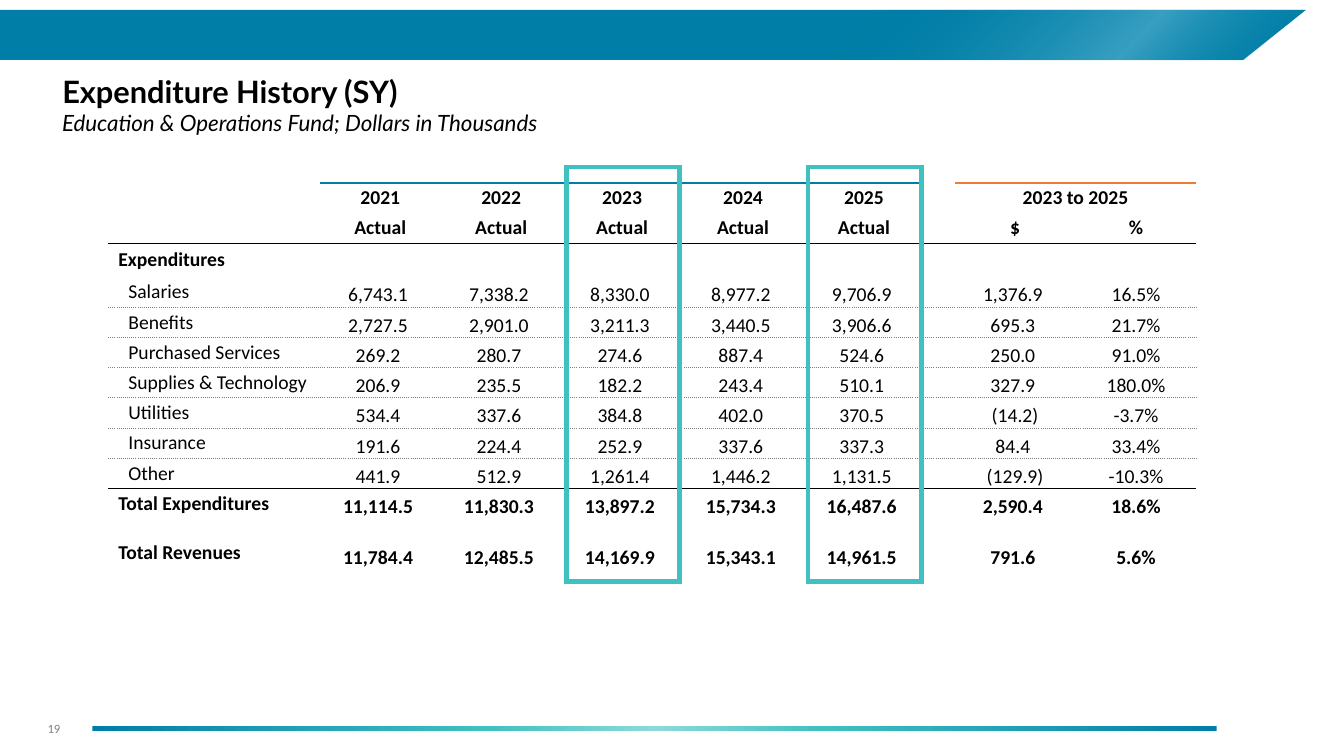
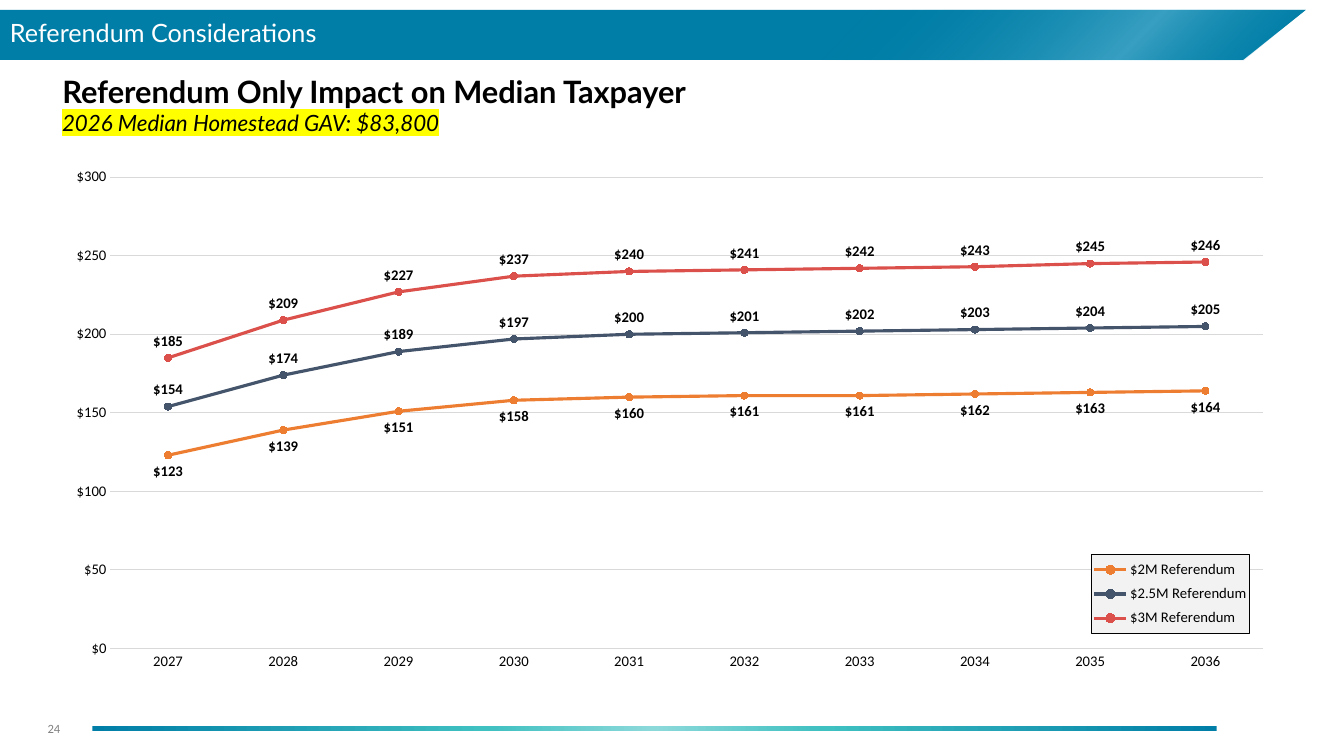
from lxml import etree
from pptx import Presentation
from pptx import util as u
from pptx.chart.data import CategoryChartData
from pptx.dml.color import RGBColor
from pptx.enum import chart as ch, shapes, text
from pptx.oxml import parse_xml
from pptx.oxml.ns import nsdecls, qn

BLUE, TEAL, PALE, ICE = "007EA7", "3FC0C1", "8CD9DA", "BAEEFF"
ORANGE, NAVY, RED = "ED7D31", "44546A", "DB504A"
BLACK, WHITE, GRAY, RULE, MIST = "000000", "FFFFFF", "808080", "D9D9D9", "F2F2F2"
HEAD, BODY = "Lato", "Calibri"
WIDE, HIGH = u.Inches(13.333), u.Inches(7.5)
MID, LOW, TOP = (text.MSO_ANCHOR.MIDDLE, text.MSO_ANCHOR.BOTTOM,
                 text.MSO_ANCHOR.TOP)


# Units: every place and size is a percentage of the slide
def across(share):
    return u.Emu(round(WIDE * share / 100))


def down(share):
    return u.Emu(round(HIGH * share / 100))


def place(x, y, w, h):
    return across(x), down(y), across(w), down(h)


def color(code):
    return RGBColor.from_string(code)


def style(font, size, face=BODY, tint=BLACK, bold=False, italic=False):
    font.size, font.name = u.Pt(size), face
    font.bold, font.italic = bold, italic
    font.color.rgb = color(tint)


def write(frame, words, size, anchor=TOP, align=None, lead=None, mark=None, **look):
    """Fill a text frame with one formatted line."""
    frame.word_wrap, frame.vertical_anchor = True, anchor
    para = frame.paragraphs[0]
    para.alignment, para.line_spacing = align, lead
    if not words:
        etree.SubElement(para._p, qn("a:endParaRPr"), sz=str(size * 100))
        return
    run = para.add_run()
    run.text = words
    style(run.font, size, **look)
    if mark:
        glow = parse_xml(f'<a:highlight {nsdecls("a")}><a:srgbClr val="{mark}"/></a:highlight>')
        run._r.rPr.find(qn("a:solidFill")).addnext(glow)


def blend(shape, stops, angle=0):
    """Give a shape a gradient of (place, colour, opacity) stops."""
    shape.fill.background()
    marks = "".join(
        f'<a:gs pos="{pos * 1000}"><a:srgbClr val="{code}">'
        f'<a:alpha val="{full * 1000}"/></a:srgbClr></a:gs>'
        for pos, code, full in stops)
    props = shape._element.spPr
    props.replace(props.find(qn("a:noFill")), parse_xml(
        f'<a:gradFill {nsdecls("a")} rotWithShape="1"><a:gsLst>{marks}</a:gsLst>'
        f'<a:lin ang="{angle * 60000}" scaled="0"/></a:gradFill>'))


def edge(cell, side, rule=None):
    """Draw one cell border from (colour, width, dash), or clear it."""
    body, size = "<a:noFill/>", ""
    if rule:
        code, width, dash = rule
        body = (f'<a:solidFill><a:srgbClr val="{code}"/></a:solidFill>'
                f'<a:prstDash val="{dash}"/>')
        size = f'w="{u.Pt(width)}"'
    cell._tc.get_or_add_tcPr().append(parse_xml(
        f'<a:ln{side} {nsdecls("a")} {size}>{body}</a:ln{side}>'))


def layout(x, y, w, h, inner=False):
    """Manual chart layout, in percentages of the chart."""
    parts = '<c:layoutTarget val="inner"/>' if inner else ""
    parts += '<c:xMode val="edge"/><c:yMode val="edge"/>'
    parts += "".join(f'<c:{key} val="{val / 100}"/>' for key, val in zip("xywh", (x, y, w, h)))
    return parse_xml(f'<c:layout {nsdecls("c")}><c:manualLayout>{parts}'
                     '</c:manualLayout></c:layout>')


class Deck:
    def __init__(self):
        self.prs = Presentation()
        self.prs.slide_width, self.prs.slide_height = WIDE, HIGH
        self.slide = None

    def page(self, title, sub, number, header=None, mark=None):
        """Start a slide with its band, footer and headings."""
        self.slide = self.prs.slides.add_slide(self.prs.slide_layouts[6])
        self.band().fill.fore_color.rgb = color(BLUE)
        blend(self.band(), [(64, BLUE, 0), (86, ICE, 30), (100, BLUE, 0)], 45)
        blend(self.rect(6.88, 96, 83.65, 0.7),
              [(0, BLUE, 100), (35, TEAL, 100), (50, PALE, 100), (65, TEAL, 100),
               (100, BLUE, 100)])
        self.label(title, 3.9, 9.47, 91.88, 6.67, size=22, face=HEAD, bold=True, lead=0.9)
        if header:
            self.label(header, 0, 1.2, 100, 6.67, size=18, face=HEAD, tint=WHITE,
                       anchor=MID, lead=0.9)
        self.label(str(number), 2.8, 93.68, 16.9, 5.33, size=9, tint=GRAY, anchor=MID)
        self.label(sub, 3.88, 14.13, 91.88, 5.33, size=16, face=HEAD, italic=True,
                   lead=0.9, mark=mark)

    def band(self):
        pen = self.slide.shapes.build_freeform(0, down(1.3))
        pen.add_line_segments([(across(97.17), down(1.3)), (across(92.5), down(7.93)),
                               (0, down(7.93))])
        band = pen.convert_to_shape()
        band.shadow.inherit = False
        band.fill.solid()
        band.line.fill.background()
        return band

    def rect(self, *spot):
        rect = self.slide.shapes.add_shape(shapes.MSO_SHAPE.RECTANGLE, *place(*spot))
        rect.shadow.inherit = False
        rect.fill.background()
        rect.line.fill.background()
        return rect

    def frame(self, *spot):
        rect = self.rect(*spot)
        rect.line.color.rgb, rect.line.width = color(TEAL), u.Pt(3)
        # Square corners
        etree.SubElement(rect._element.spPr.find(qn("a:ln")), qn("a:miter"), lim="800000")

    def label(self, words, *spot, **look):
        write(self.slide.shapes.add_textbox(*place(*spot)).text_frame, words, **look)

    def table(self, x, y, cols, rows):
        part = self.slide.shapes.add_table(
            len(rows), len(cols), *place(x, y, sum(cols), sum(rows)))
        table = part.table
        table.first_row = table.horz_banding = False
        # Plain style without a grid
        table._tbl.tblPr.find(qn("a:tableStyleId")).text = "{2D5ABB26-0587-4C30-8999-92F81FD0307C}"
        for col, width in zip(table.columns, cols):
            col.width = across(width)
        for row, height in zip(table.rows, rows):
            row.height = down(height)
        return table

    def chart(self, spot, cats, lines, top, step, money):
        data = CategoryChartData(number_format=money)
        data.categories = cats
        for name, vals, *_ in lines:
            data.add_series(name, vals)
        chart = self.slide.shapes.add_chart(
            ch.XL_CHART_TYPE.LINE_MARKERS, *place(*spot), data).chart
        chart.has_title = False
        style(chart.font, 10.5)
        self.axes(chart, top, step, money)
        chart.plots[0].vary_by_categories = False
        for series, (_, _, code, side) in zip(chart.plots[0].series, lines):
            self.series(series, code, side, money)
        return chart

    def axes(self, chart, top, step, money):
        cat, val = chart.category_axis, chart.value_axis
        for axis in (cat, val):
            axis.major_tick_mark = axis.minor_tick_mark = ch.XL_TICK_MARK.NONE
            style(axis.tick_labels.font, 10.5)
        val.minimum_scale, val.maximum_scale, val.major_unit = 0, top, step
        val.tick_labels.number_format = money
        val.tick_labels.number_format_is_linked = False
        val.format.line.fill.background()
        for line in (cat.format.line, val.major_gridlines.format.line):
            line.color.rgb, line.width = color(RULE), u.Pt(0.75)

    def series(self, series, code, side, money):
        series.smooth = False
        series.format.line.color.rgb = color(code)
        series.format.line.width = u.Pt(2.25)
        dot = series.marker
        dot.style, dot.size = ch.XL_MARKER_STYLE.CIRCLE, 5
        dot.format.fill.solid()
        dot.format.fill.fore_color.rgb = color(code)
        dot.format.line.color.rgb = color(code)
        tags = series.data_labels
        tags.show_value, tags.position = True, side
        tags.number_format, tags.number_format_is_linked = money, False
        style(tags.font, 10.5, bold=True)

    def legend(self, chart, *spot):
        chart.has_legend = True
        key = chart.legend
        key.position, key.include_in_layout = ch.XL_LEGEND_POSITION.RIGHT, True
        style(key.font, 10.5)
        root = key._element
        for old in root.findall(qn("c:layout")):
            root.remove(old)
        root.find(qn("c:overlay")).addprevious(layout(*spot))
        root.find(qn("c:txPr")).addprevious(parse_xml(
            f'<c:spPr {nsdecls("c", "a")}><a:solidFill><a:srgbClr val="{MIST}"/></a:solidFill>'
            f'<a:ln w="{u.Pt(0.75)}"><a:solidFill><a:srgbClr val="{BLACK}"/></a:solidFill>'
            '</a:ln></c:spPr>'))


# Expenditure table: five years, a narrow gap, then the change
YEARS = ["2021", "2022", "2023", "2024", "2025"]
COSTS = [
    ("Salaries", "6,743.1 7,338.2 8,330.0 8,977.2 9,706.9 1,376.9 16.5%"),
    ("Benefits", "2,727.5 2,901.0 3,211.3 3,440.5 3,906.6 695.3 21.7%"),
    ("Purchased Services", "269.2 280.7 274.6 887.4 524.6 250.0 91.0%"),
    ("Supplies & Technology", "206.9 235.5 182.2 243.4 510.1 327.9 180.0%"),
    ("Utilities", "534.4 337.6 384.8 402.0 370.5 (14.2) -3.7%"),
    ("Insurance", "191.6 224.4 252.9 337.6 337.3 84.4 33.4%"),
    ("Other", "441.9 512.9 1,261.4 1,446.2 1,131.5 (129.9) -10.3%"),
    ("Total Expenditures", "11,114.5 11,830.3 13,897.2 15,734.3 16,487.6 2,590.4 18.6%"),
    ("Total Revenues", "11,784.4 12,485.5 14,169.9 15,343.1 14,961.5 791.6 5.6%"),
]


def cells():
    yield ["", *YEARS, "", "2023 to 2025", ""]
    yield ["", *["Actual"] * 5, "", "$", "%"]
    yield ["Expenditures", *[""] * 8]
    for name, line in COSTS:
        # A space after plain figures lines them up with bracketed ones
        nums = [num + " " if num[-1].isdigit() else num for num in line.split()]
        yield [name, *nums[:5], "", *nums[5:]]


def rule(row, col):
    """Return the rule that runs above a row at one column."""
    if row == 0 and col not in (0, 6):
        return BLUE if col < 6 else ORANGE, 1.5, "solid"
    if row in (2, 10):
        return BLACK, 1, "solid"
    if 4 <= row <= 9:
        return GRAY, 1, "sysDot"
    return None


def history(deck):
    deck.page("Expenditure History (SY)", "Education & Operations Fund; Dollars in Thousands", 19)
    left, name, year = 8.05, 15.75, 9
    table = deck.table(left, 24.18, [name, *[year] * 5, 2.25, year, year], [4] * 11 + [6.67])
    table.cell(0, 7).merge(table.cell(0, 8))
    for row, line in enumerate(cells()):
        for col, words in enumerate(line):
            cell = table.cell(row, col)
            item, num = 3 <= row <= 9, row > 2 and col > 0
            side = 0 if num else 0.2 if item else 0.1
            pad = 0.05 if col == 0 and row in (2, 11) else 0
            cell.margin_left, cell.margin_right = u.Inches(side), u.Inches(min(side, 0.1))
            cell.margin_top = cell.margin_bottom = u.Inches(pad)
            write(cell.text_frame, words, 14, bold=not item,
                  align=text.PP_ALIGN.CENTER if col else None)
            cell.vertical_anchor = LOW if num or row == 11 else MID
            for key, line_at in zip("LRTB", (None, None, rule(row, col), rule(row + 1, col))):
                edge(cell, key, line_at)
            cell.fill.background()
    # Frames around the compared years
    for col in (2, 4):
        deck.frame(left + name + col * year + 0.35, 22.13, 8.42, 54.8)


# Referendum chart
def impact(deck):
    deck.page("Referendum Only Impact on Median Taxpayer", "2026 Median Homestead GAV: $83,800",
              24, header="Referendum Considerations", mark="FFFF00")
    over, under = ch.XL_LABEL_POSITION.ABOVE, ch.XL_LABEL_POSITION.BELOW
    lines = [
        ("$2M Referendum", [123, 139, 151, 158, 160, 161, 161, 162, 163, 164], ORANGE, under),
        ("$2.5M Referendum", [154, 174, 189, 197, 200, 201, 202, 203, 204, 205], NAVY, over),
        ("$3M Referendum", [185, 209, 227, 237, 240, 241, 242, 243, 245, 246], RED, over),
    ]
    chart = deck.chart((3.9, 20.8, 91.88, 69.2), [str(year) for year in range(2027, 2037)],
                       lines, top=300, step=50, money='"$"#,##0')
    plot = chart._chartSpace.chart.plotArea
    for old in plot.findall(qn("c:layout")):
        plot.remove(old)
    plot.insert(0, layout(4.7, 3.82, 93.35, 90.1, inner=True))
    deck.legend(chart, 84.15, 75.95, 12.8, 15.1)


def main():
    deck = Deck()
    history(deck)
    impact(deck)
    deck.prs.save("out.pptx")


if __name__ == "__main__":
    main()
